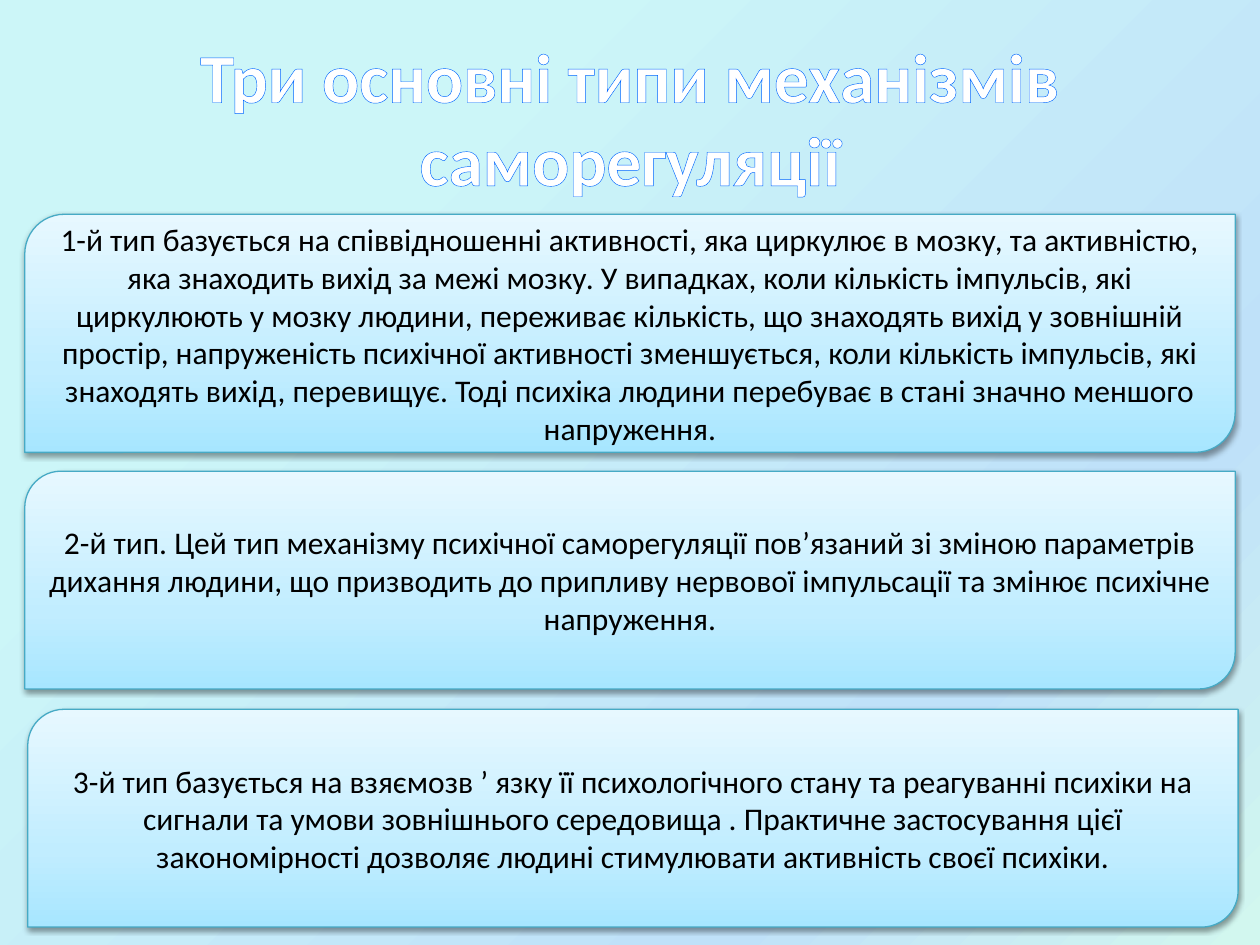
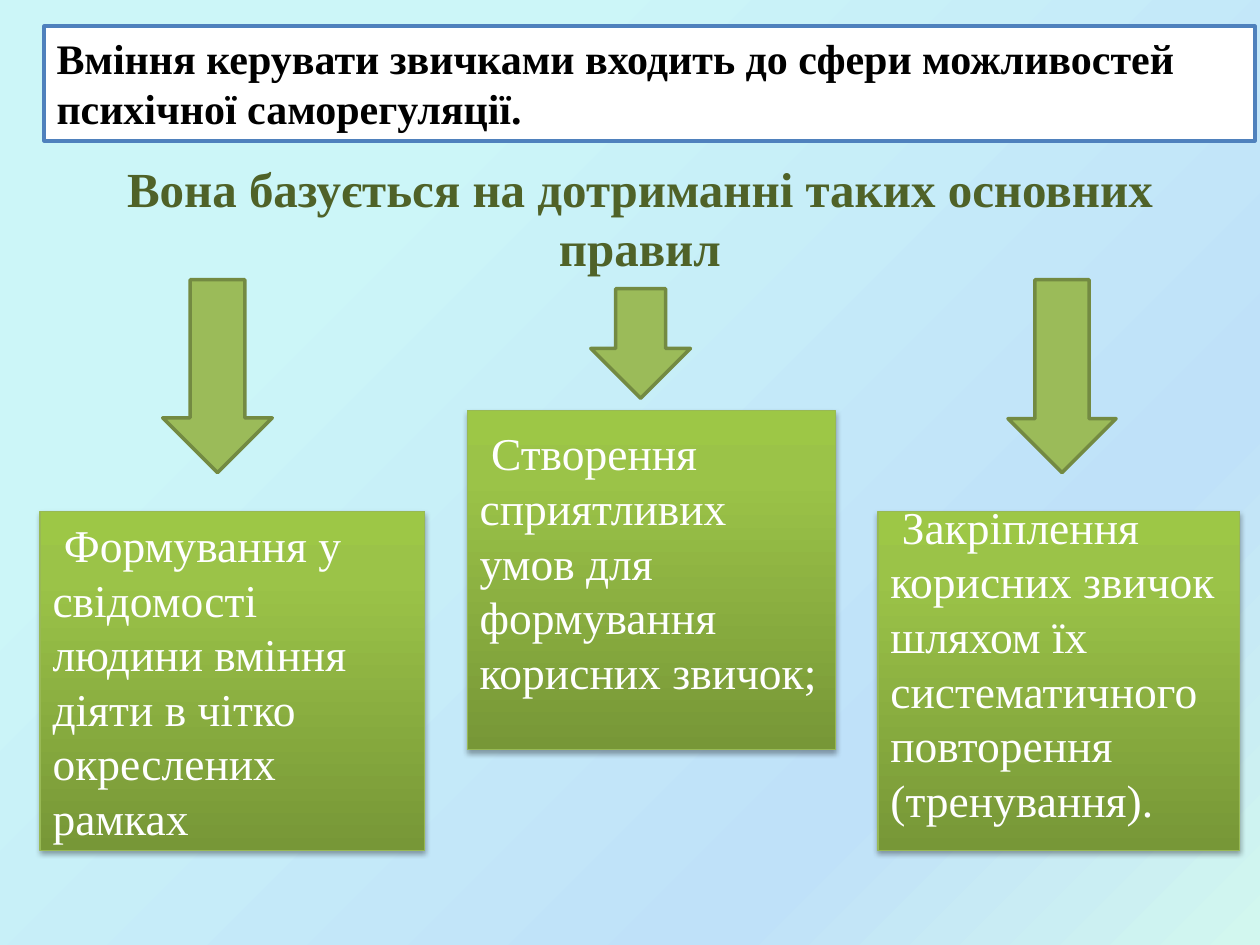
"""Build two slides on the psychological mechanisms of self-regulation."""
from dataclasses import dataclass

from lxml import etree
from pptx import Presentation
from pptx import util as u
from pptx.dml.color import RGBColor
from pptx.enum import shapes, text
from pptx.oxml.ns import qn

COLORS = {
    "white": "FFFFFF", "black": "000000",
    "title_edge": "0066FF", "panel_edge": "46AAC5", "thesis_edge": "4F81BD",
    "olive": "4F6228", "arrow": "9BBB59", "arrow_edge": "738A42",
    "rule_edge": "98B955",
}
BACKDROP = [(0, "CCF6F8"), (25, "CCF6F8"), (75, "BFE1F9"), (100, "D2F7EF")]
PANEL_FILL = [(0, "A7E6FF"), (35, "C1EDFF"), (100, "E7F8FF")]
RULE_FILL = [(0, "779737"), (80, "9BC348"), (100, "9DC746")]
SANS, SERIF = "Calibri", "Times New Roman"
SHAPE = shapes.MSO_SHAPE
LEFT, CENTER = text.PP_ALIGN.LEFT, text.PP_ALIGN.CENTER
TOP, MIDDLE = text.MSO_ANCHOR.TOP, text.MSO_ANCHOR.MIDDLE


@dataclass(frozen=True)
class Area:
    """Place and size in centimetres."""
    left: float
    top: float
    width: float
    height: float

    def lengths(self) -> list:
        """Return the four lengths for a shape call."""
        return [u.Cm(v) for v in (self.left, self.top, self.width, self.height)]


@dataclass(frozen=True)
class MechanismType:
    """One type of self-regulation mechanism and its panel."""
    area: Area
    words: str


@dataclass(frozen=True)
class Rule:
    """One rule, its box and the arrow that leads to it."""
    area: Area
    arrow: Area
    words: str
    bottom_margin: float = 0.13


MECHANISMS = [
    MechanismType(Area(0.5, 4.32, 24.4, 4.8), "1-й тип базується на співвідношенні активності, яка циркулює в мозку, та активністю, яка знаходить вихід за межі мозку. У випадках, коли кількість імпульсів, які циркулюють у мозку людини, переживає кількість, що знаходять вихід у зовнішній простір, напруженість психічної активності зменшується, коли кількість імпульсів, які знаходять вихід, перевищує. Тоді психіка людини перебуває в стані значно меншого напруження."),
    MechanismType(Area(0.5, 9.5, 24.4, 4.39), "2-й тип. Цей тип механізму психічної саморегуляції пов’язаний зі зміною параметрів дихання людини, що призводить до припливу нервової імпульсації та змінює психічне напруження."),
    MechanismType(Area(0.56, 14.3, 24.4, 4.39), "3-й тип базується на взяємозв ’ язку її психологічного стану та реагуванні психіки на сигнали та умови зовнішнього середовища . Практичне застосування цієї закономірності дозволяє людині стимулювати активність своєї психіки."),
]
RULES = [
    Rule(Area(0.81, 10.31, 7.75, 6.83), Area(3.28, 5.64, 2.21, 3.89),
         "Формування у свідомості людини вміння діяти в чітко окреслених рамках"),
    Rule(Area(9.42, 8.28, 7.42, 6.83), Area(11.91, 5.82, 2.01, 2.21),
         "Створення сприятливих умов для формування корисних звичок;", 0.86),
    Rule(Area(17.7, 10.31, 7.29, 6.83), Area(20.32, 5.64, 2.18, 3.89),
         "Закріплення корисних звичок шляхом їх систематичного повторення (тренування).", 0.86),
]


def rgb(name: str) -> RGBColor:
    """Look up a named colour."""
    return RGBColor.from_string(COLORS[name])


def write(frame, words: str, *, size: float, font: str, color: str, bold=False,
          align=CENTER, anchor=MIDDLE, indent=0.0):
    """Put formatted words in a text frame and return the run."""
    frame.word_wrap = True
    frame.vertical_anchor = anchor
    paragraph = frame.paragraphs[0]
    paragraph.alignment = align
    if indent:
        paragraph._p.get_or_add_pPr().set("indent", str(u.Cm(indent)))
    run = paragraph.add_run()
    run.text = words
    run.font.size = u.Pt(size)
    run.font.name = font
    run.font.bold = bold
    run.font.color.rgb = rgb(color)
    return run


def set_gradient(fill, owner, stops: list, angle: float) -> None:
    """Give a fill its gradient stops and its angle."""
    fill.gradient()
    fill.gradient_angle = angle
    stop_list = next(owner.iter(qn("a:gsLst")))
    for old_stop in list(stop_list):
        stop_list.remove(old_stop)
    for position, color in stops:
        stop = etree.SubElement(stop_list, qn("a:gs"), pos=str(position * 1000))
        etree.SubElement(stop, qn("a:srgbClr"), val=color)


def add_figure(slide, kind, area: Area, edge: str, weight: float, fill: str = ""):
    """Add a preset shape with an edge, no shadow and an optional plain fill."""
    figure = slide.shapes.add_shape(kind, *area.lengths())
    figure.shadow.inherit = False
    figure.line.color.rgb = rgb(edge)
    figure.line.width = u.Pt(weight)
    if fill:
        figure.fill.solid()
        figure.fill.fore_color.rgb = rgb(fill)
    return figure


def add_raised(slide, kind, area: Area, edge: str, stops: list, opacity: int):
    """Add a shape with an upward gradient and a soft shadow."""
    raised = add_figure(slide, kind, area, edge, 0.75)
    set_gradient(raised.fill, raised._element.spPr, stops, 90)
    effects = raised._element.spPr.find(qn("a:effectLst"))
    shadow = etree.SubElement(effects, qn("a:outerShdw"), blurRad=str(u.Pt(3.1)),
                              dist=str(u.Pt(1.6)), dir="5400000", rotWithShape="0")
    color = etree.SubElement(shadow, qn("a:srgbClr"), val=COLORS["black"])
    etree.SubElement(color, qn("a:alpha"), val=str(opacity * 1000))
    return raised


def outline_letters(run, color: str, weight: float) -> None:
    """Draw the letters of a run with an edge."""
    edge = etree.Element(qn("a:ln"), w=str(u.Pt(weight)))
    fill = etree.SubElement(edge, qn("a:solidFill"))
    etree.SubElement(fill, qn("a:srgbClr"), val=COLORS[color])
    run._r.get_or_add_rPr().insert(0, edge)


def build_mechanisms(prs) -> None:
    """Build the slide on the three types of mechanisms."""
    slide = prs.slides.add_slide(prs.slide_layouts[5])
    title = slide.shapes.title
    title.left, title.top, title.width, title.height = Area(1.27, 0.76, 22.86, 3.18).lengths()
    heading = write(title.text_frame, "Три основні типи механізмів саморегуляції",
                    size=39.6, font=SANS, color="white", bold=True)
    outline_letters(heading, "title_edge", 1.45)
    for mechanism in MECHANISMS:
        panel = add_raised(slide, SHAPE.ROUND_2_DIAG_RECTANGLE, mechanism.area,
                           "panel_edge", PANEL_FILL, 38)
        write(panel.text_frame, mechanism.words, size=18, font=SANS, color="black")


def build_rules(prs) -> None:
    """Build the slide on the rules of managing habits."""
    slide = prs.slides.add_slide(prs.slide_layouts[6])
    thesis = add_figure(slide, SHAPE.RECTANGLE, Area(0.89, 0.53, 24.41, 2.31),
                        "thesis_edge", 2, "white")
    write(thesis.text_frame,
          "Вміння керувати звичками входить до сфери можливостей психічної саморегуляції.",
          size=24, font=SERIF, color="black", bold=True, align=LEFT, anchor=TOP)
    lead_in = slide.shapes.add_textbox(*Area(0.91, 3.07, 23.98, 2.64).lengths())
    write(lead_in.text_frame, "Вона базується на дотриманні таких основних правил",
          size=28, font=SERIF, color="olive", bold=True, anchor=TOP)
    for rule in RULES:
        add_figure(slide, SHAPE.DOWN_ARROW, rule.arrow, "arrow_edge", 2, "arrow")
        box = add_raised(slide, SHAPE.RECTANGLE, rule.area, "rule_edge", RULE_FILL, 35)
        box.text_frame.margin_bottom = u.Cm(rule.bottom_margin)
        write(box.text_frame, rule.words, size=26, font=SERIF, color="white",
              align=LEFT, indent=0.23)


def main() -> None:
    """Build and save the presentation."""
    prs = Presentation()
    prs.slide_width, prs.slide_height = u.Cm(25.4), u.Cm(19.05)
    master = prs.slide_master
    set_gradient(master.background.fill, master._element, BACKDROP, 315)
    build_mechanisms(prs)
    build_rules(prs)
    prs.save("out.pptx")


if __name__ == "__main__":
    main()
